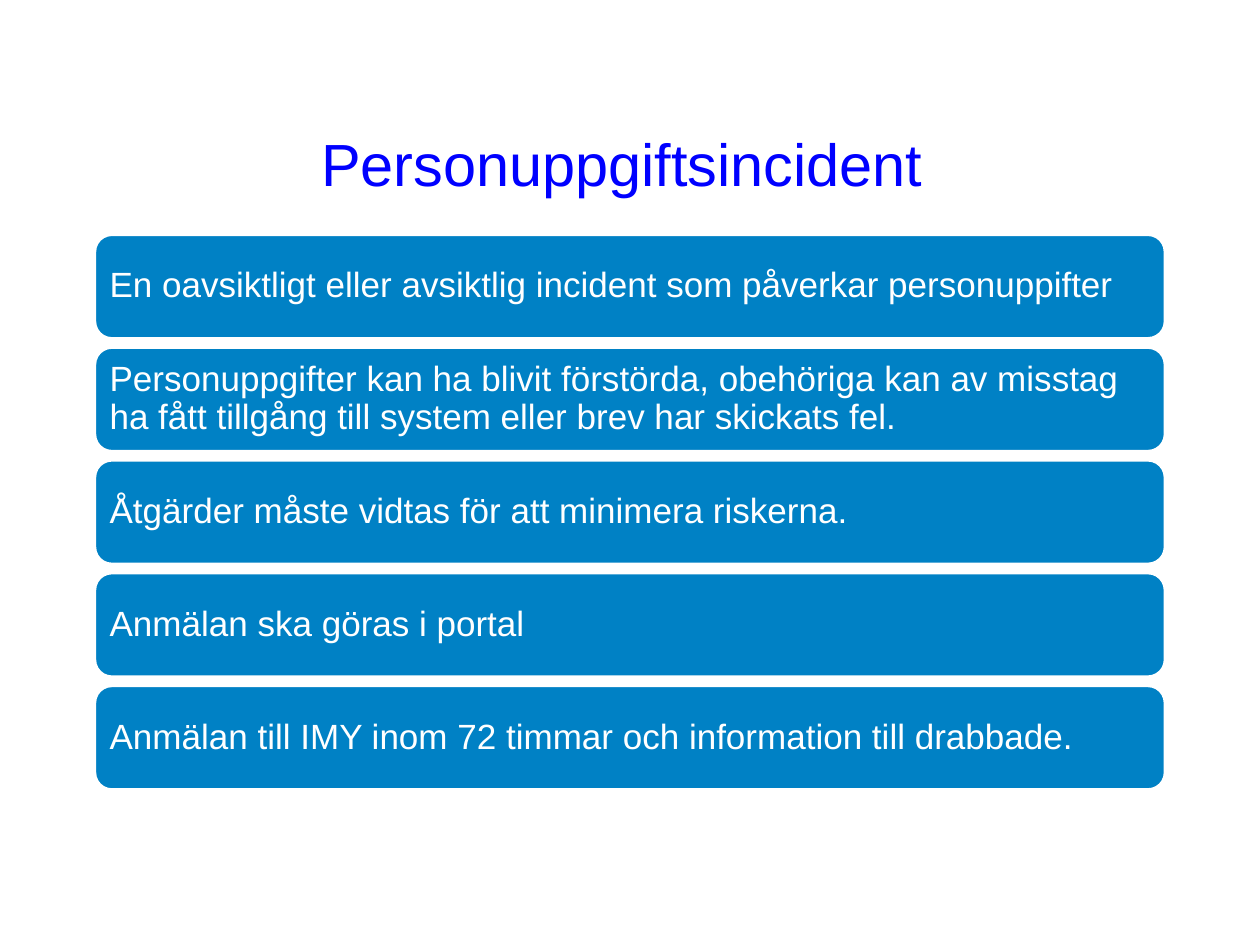
from pptx import Presentation
from pptx import util as u
from pptx.dml.color import RGBColor
from pptx.enum import shapes, text

COLORS = {"title": "0000FF", "bar": "0081C5", "white": "FFFFFF"}
STEPS = [
    "En oavsiktligt eller avsiktlig incident som påverkar personuppifter",
    "Personuppgifter kan ha blivit förstörda, obehöriga kan av misstag "
    "ha fått tillgång till system eller brev har skickats fel.",
    "Åtgärder måste vidtas för att minimera riskerna.",
    "Anmälan ska göras i portal",
    "Anmälan till IMY inom 72 timmar och information till drabbade.",
]


def style(paragraph, size, color, align):
    paragraph.alignment = align
    paragraph.font.name = "Arial"
    paragraph.font.size = u.Pt(size)
    paragraph.font.color.rgb = RGBColor.from_string(COLORS[color])


prs = Presentation()
prs.slide_width, prs.slide_height = u.Inches(10), u.Inches(7.5)
slide = prs.slides.add_slide(prs.slide_layouts[5])

margin = u.Inches(0.75)
content_width = prs.slide_width - 2 * margin
first_top, last_top, bar_height = u.Inches(1.86), u.Inches(5.44), u.Inches(0.83)
row_pitch = (last_top - first_top) // (len(STEPS) - 1)

heading = slide.shapes.title
heading.left, heading.top = margin, u.Inches(0.67)
heading.width, heading.height = content_width, u.Inches(1.25)
heading.text_frame.text = "Personuppgiftsincident "
heading.text_frame.vertical_anchor = text.MSO_ANCHOR.MIDDLE
style(heading.text_frame.paragraphs[0], 34, "title", text.PP_ALIGN.CENTER)

for row, step in enumerate(STEPS):
    bar = slide.shapes.add_shape(
        shapes.MSO_SHAPE.ROUNDED_RECTANGLE,
        margin, first_top + row * row_pitch, content_width, bar_height)
    bar.shadow.inherit = False
    bar.fill.solid()
    bar.fill.fore_color.rgb = RGBColor.from_string(COLORS["bar"])
    bar.line.color.rgb = RGBColor.from_string(COLORS["white"])
    bar.line.width = u.Pt(2)
    frame = bar.text_frame
    frame.word_wrap = True
    frame.vertical_anchor = text.MSO_ANCHOR.MIDDLE
    frame.margin_left = frame.margin_right = u.Inches(0.08)
    frame.margin_top = frame.margin_bottom = u.Inches(0.08)
    frame.text = step
    frame.paragraphs[0].line_spacing = 0.9
    style(frame.paragraphs[0], 20, "white", text.PP_ALIGN.LEFT)

prs.save("out.pptx")
